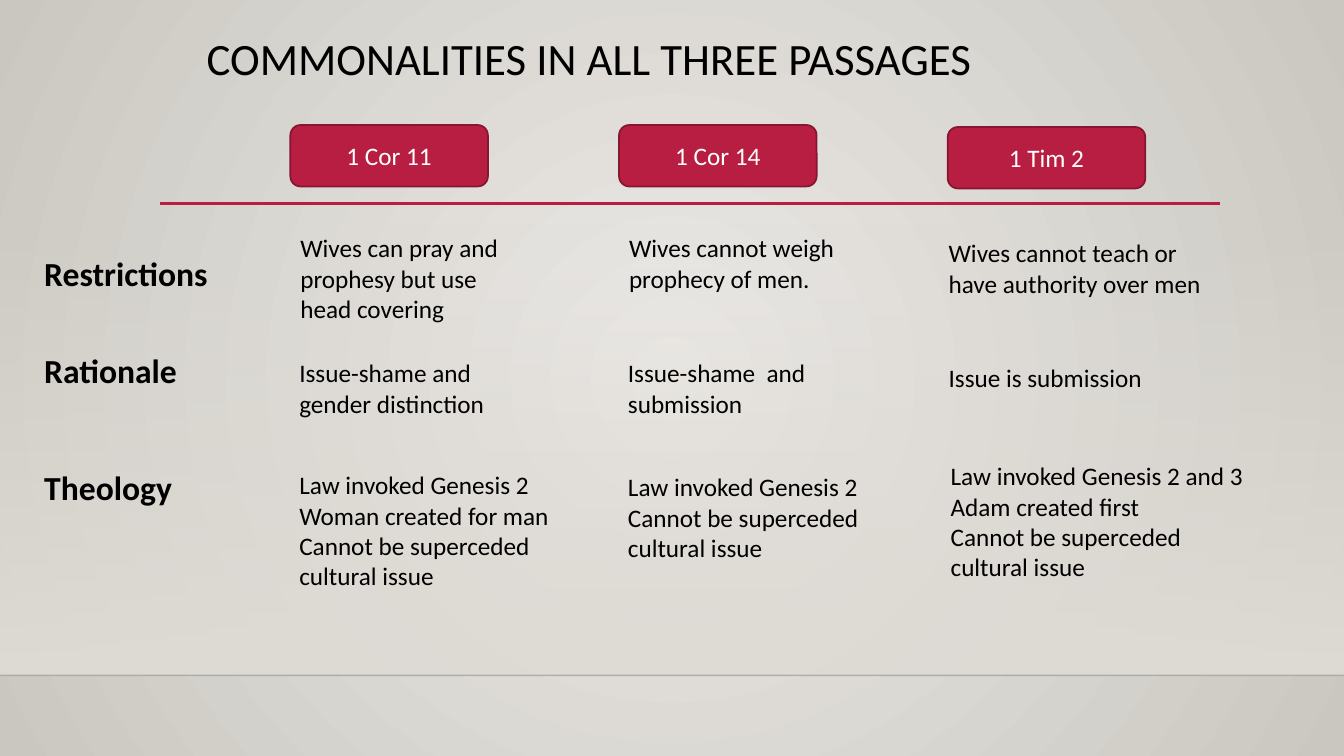
from lxml.etree import SubElement
from pptx import Presentation
from pptx.dml.color import RGBColor
from pptx.enum.shapes import MSO_CONNECTOR as CONN, MSO_SHAPE as SHAPE
from pptx.enum.text import MSO_ANCHOR as ANCHOR, MSO_AUTO_SIZE as AUTO, PP_ALIGN as ALIGN
from pptx.oxml.ns import qn
from pptx.util import Pt

PX = 9144
WIDTH, HEIGHT = 1333, 750
FONT = "Calibri"
BLACK = RGBColor(0x00, 0x00, 0x00)
WHITE = RGBColor(0xFF, 0xFF, 0xFF)
CRIMSON = RGBColor(0xB7, 0x1E, 0x42)
MAROON = RGBColor(0x87, 0x16, 0x31)
SAND = RGBColor(0xDF, 0xDB, 0xD5)
GLOW = RGBColor(0xEC, 0xEA, 0xE7)
EDGE = RGBColor(0xCA, 0xC7, 0xC1)

HEADINGS = [("1 Cor 11", 0), ("1 Cor 14", 0), ("1 Tim 2", 2)]
ROWS = [
    ("Restrictions", 246, [
        ((288, 226, 232, 101), ["Wives can pray and prophesy but use head covering"]),
        ((614, 226, 302, 71), ["Wives cannot weigh prophecy of men."]),
        ((931, 231, 285, 71), ["Wives cannot teach or have authority over men"]),
    ]),
    ("Rationale", 342, [
        ((287, 350, 232, 71), ["Issue-shame and gender distinction"]),
        ((613, 350, 264, 71), ["Issue-shame  and submission"]),
        ((931, 355, 232, 40), ["Issue is submission"]),
    ]),
    ("Theology", 458, [
        ((287, 461, 272, 131), ["Law invoked Genesis 2", "Woman created for man",
                                "Cannot be superceded cultural issue"]),
        ((613, 463, 264, 131), ["Law invoked Genesis 2",
                                "Cannot be superceded cultural issue"]),
        ((933, 452, 328, 162), ["Law invoked Genesis 2 and 3", "Adam created first",
                                "Cannot be superceded cultural issue"]),
    ]),
]


def emu(box):
    return [v * PX for v in box]


def set_font(p, size, color=BLACK, bold=False):
    p.font.name, p.font.size = FONT, Pt(size)
    p.font.color.rgb, p.font.bold = color, bold


def set_gradient(fill, start, end):
    fill.gradient()
    for stop, color, position in zip(fill.gradient_stops, (start, end), (0, 1)):
        stop.color.rgb, stop.position = color, position


def set_alpha(element, percent):
    color = next(element.iter(qn("a:srgbClr")))
    SubElement(color, qn("a:alpha"), val=str(percent * 1000))


def add_rule(slide, box, color, width):
    x, y, w, h = box
    line = slide.shapes.add_connector(CONN.STRAIGHT, *emu((x, y, x + w, y + h)))
    line.line.color.rgb, line.line.width = color, Pt(width)
    SubElement(line._element.spPr, qn("a:effectLst"))
    return line


def add_text(slide, box, lines, size, bold=False, wrap=True):
    tf = slide.shapes.add_textbox(*emu(box)).text_frame
    tf.word_wrap, tf.auto_size = wrap, AUTO.SHAPE_TO_FIT_TEXT
    tf.text = "\n".join(lines)
    for p in tf.paragraphs:
        set_font(p, size, bold=bold)


def add_backdrop(slide, box):
    x, y, w, h = box
    set_gradient(slide.background.fill, GLOW, EDGE)
    grad = next(slide.element.iter(qn("a:gradFill")))
    for lin in grad.findall(qn("a:lin")):
        grad.remove(lin)
    radial = SubElement(grad, qn("a:path"), path="circle")
    SubElement(radial, qn("a:fillToRect"), l="50000", t="50000", r="50000", b="50000")

    floor = y + 670
    sp = slide.shapes.add_shape(SHAPE.RECTANGLE, *emu((x, y + 221, w, floor - y - 221)))
    sp.shadow.inherit = False
    sp.line.fill.background()
    set_gradient(sp.fill, SAND, SAND)
    sp.fill.gradient_angle = 270
    set_alpha(sp._element.spPr, 0)
    edge = add_rule(slide, (x, floor, w, 0), BLACK, 1)
    set_alpha(edge._element.spPr, 20)


def add_title(slide, box):
    title = slide.shapes.title
    title.left, title.top, title.width, title.height = emu(box)
    tf = title.text_frame
    tf.text = "COMMONALITIES IN ALL THREE PASSAGES"
    tf.word_wrap, tf.auto_size, tf.vertical_anchor = True, AUTO.NONE, ANCHOR.TOP
    p = tf.paragraphs[0]
    p.alignment, p.line_spacing = ALIGN.LEFT, 0.9
    set_font(p, 32)


def add_headings(slide, box):
    x, y, w, h = box
    step = (w - 196) // (len(HEADINGS) - 1)
    for i, (label, drop) in enumerate(HEADINGS):
        sp = slide.shapes.add_shape(SHAPE.ROUNDED_RECTANGLE,
                                    *emu((x + i * step, y + drop, 196, h)))
        sp.shadow.inherit = False
        sp.fill.solid()
        sp.fill.fore_color.rgb = CRIMSON
        sp.line.color.rgb, sp.line.width = MAROON, Pt(1.25)
        tf = sp.text_frame
        tf.text, tf.vertical_anchor = label, ANCHOR.MIDDLE
        p = tf.paragraphs[0]
        p.alignment = ALIGN.CENTER
        set_font(p, 18, WHITE)


def add_comparison(slide, box):
    x, y, w, h = box
    for label, top, cells in ROWS:
        add_text(slide, (x, y + top - 226, 207, 50), [label], 24, bold=True, wrap=False)
        for (left, cell_top, width, height), lines in cells:
            cell = (x + left - 34, y + cell_top - 226, width, height)
            add_text(slide, cell, lines, 18)


def main():
    prs = Presentation()
    prs.slide_width, prs.slide_height = emu((WIDTH, HEIGHT))
    slide = prs.slides.add_slide(prs.slide_layouts[5])
    add_backdrop(slide, (0, 0, WIDTH, HEIGHT))
    add_rule(slide, (159, 202, 1051, 0), CRIMSON, 2.5)
    add_title(slide, (195, 31, 1050, 115))
    add_headings(slide, (288, 124, 848, 61))
    add_comparison(slide, (34, 226, 1227, 388))
    prs.save("out.pptx")


if __name__ == "__main__":
    main()
